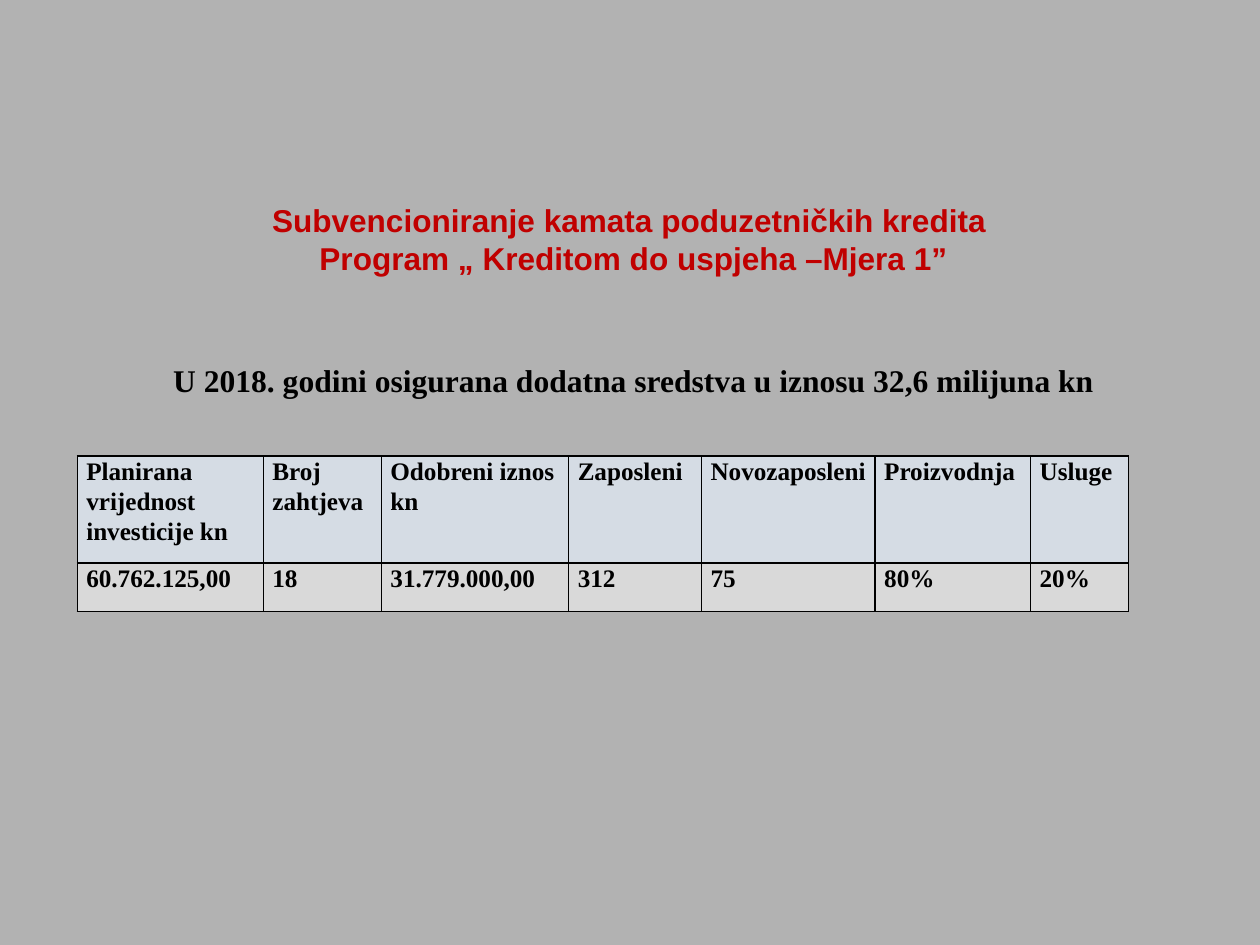
from dataclasses import dataclass

from lxml.etree import SubElement
from pptx import Presentation
from pptx.dml.color import RGBColor
from pptx.enum.text import MSO_ANCHOR as Anchor, PP_ALIGN as Align
from pptx.oxml.ns import qn
from pptx.slide import Slide
from pptx.table import _Cell as Cell
from pptx.text.text import _Paragraph as Paragraph
from pptx.util import Inches, Length, Pt

SLIDE_WIDTH = 11.1
SLIDE_HEIGHT = SLIDE_WIDTH * 3 / 4
COLORS = {
    "background": "B2B2B2",
    "title": "C00000",
    "text": "000000",
    "header": "D5DCE4",
    "values": "D9D9D9",
}


@dataclass(frozen=True)
class TextStyle:
    font: str
    size: int
    color: str
    spacing: float


@dataclass(frozen=True)
class TitleLine:
    text: str
    style: TextStyle
    space_before: int = 0


@dataclass(frozen=True)
class Column:
    header: str
    value: str
    width: float


PROGRAM_STYLE = TextStyle("Arial", 20, "title", 1.0)
FUNDS_STYLE = TextStyle("Times New Roman", 20, "text", 1.0)
TABLE_STYLE = TextStyle("Times New Roman", 16, "text", 1.07)

TITLE_LINES = [
    TitleLine("Subvencioniranje kamata poduzetničkih kredita ", PROGRAM_STYLE),
    TitleLine("Program „ Kreditom do uspjeha –Mjera 1”", PROGRAM_STYLE),
    TitleLine("U 2018. godini osigurana dodatna sredstva u iznosu 32,6 milijuna kn", FUNDS_STYLE, 53),
]
COLUMNS = [
    Column("Planirana vrijednost investicije kn", "60.762.125,00", 1.64),
    Column("Broj zahtjeva", "18", 1.04),
    Column("Odobreni iznos kn", "31.779.000,00", 1.65),
    Column("Zaposleni", "312", 1.17),
    Column("Novozaposleni", "75", 1.53),
    Column("Proizvodnja", "80%", 1.37),
    Column("Usluge", "20%", 0.86),
]
ROW_HEIGHTS = [0.94, 0.43]


def across(percent: float) -> Length:
    return Inches(SLIDE_WIDTH * percent / 100)


def down(percent: float) -> Length:
    return Inches(SLIDE_HEIGHT * percent / 100)


def write_paragraph(paragraph: Paragraph, text: str, style: TextStyle) -> None:
    paragraph.text = text
    paragraph.line_spacing = style.spacing
    for run in paragraph.runs:
        run.font.name = style.font
        run.font.size = Pt(style.size)
        run.font.bold = True
        run.font.color.rgb = RGBColor.from_string(COLORS[style.color])


def add_title(slide: Slide) -> None:
    box = slide.shapes.add_textbox(across(11.05), down(21.3), across(78.5), down(21))
    frame = box.text_frame
    frame.word_wrap = True
    frame.vertical_anchor = Anchor.TOP
    frame.margin_top = frame.margin_bottom = 0
    for index, line in enumerate(TITLE_LINES):
        paragraph = frame.add_paragraph() if index else frame.paragraphs[0]
        write_paragraph(paragraph, line.text, line.style)
        paragraph.alignment = Align.CENTER
        if line.space_before:
            paragraph.space_before = Pt(line.space_before)


def add_borders(cell: Cell) -> None:
    properties = cell._tc.get_or_add_tcPr()
    for position, side in enumerate(("lnL", "lnR", "lnT", "lnB")):
        border = SubElement(properties, qn(f"a:{side}"), w=str(Pt(1)))
        fill = SubElement(border, qn("a:solidFill"))
        SubElement(fill, qn("a:srgbClr"), val=COLORS["text"])
        properties.insert(position, border)


def fill_cell(cell: Cell, text: str, color: str) -> None:
    cell.margin_left = Inches(0.08)
    cell.margin_right = Inches(0.07)
    cell.margin_top = cell.margin_bottom = 0
    cell.fill.solid()
    cell.fill.fore_color.rgb = RGBColor.from_string(COLORS[color])
    write_paragraph(cell.text_frame.paragraphs[0], text, TABLE_STYLE)
    add_borders(cell)


def add_results_table(slide: Slide) -> None:
    table = slide.shapes.add_table(
        len(ROW_HEIGHTS), len(COLUMNS), across(6.13), down(48.27),
        Inches(sum(column.width for column in COLUMNS)), Inches(sum(ROW_HEIGHTS)),
    ).table
    for row, height in zip(table.rows, ROW_HEIGHTS):
        row.height = Inches(height)
    for index, column in enumerate(COLUMNS):
        table.columns[index].width = Inches(column.width)
        fill_cell(table.cell(0, index), column.header, "header")
        fill_cell(table.cell(1, index), column.value, "values")


def main() -> None:
    presentation = Presentation()
    presentation.slide_width = Inches(SLIDE_WIDTH)
    presentation.slide_height = Inches(SLIDE_HEIGHT)
    slide = presentation.slides.add_slide(presentation.slide_layouts[6])
    slide.background.fill.solid()
    slide.background.fill.fore_color.rgb = RGBColor.from_string(COLORS["background"])
    add_title(slide)
    add_results_table(slide)
    presentation.save("out.pptx")


if __name__ == "__main__":
    main()
